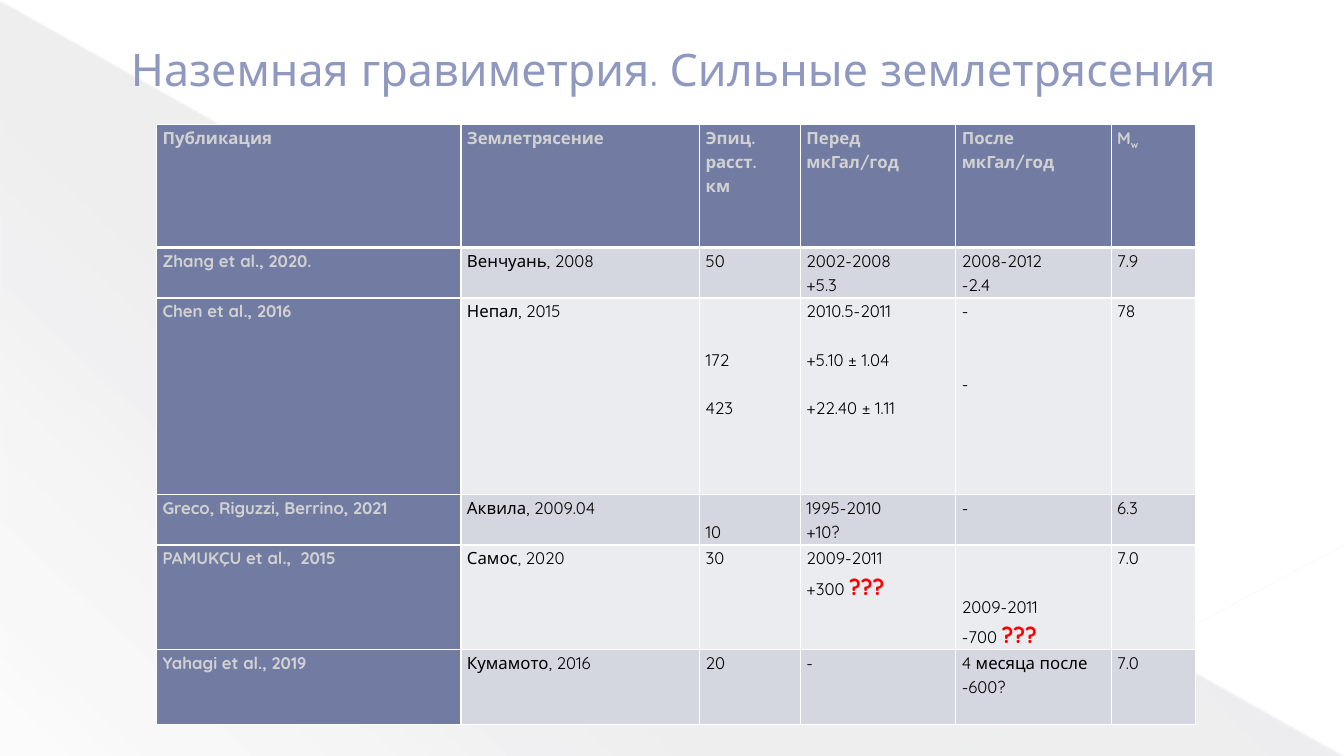
from pptx import Presentation
from pptx.dml.color import RGBColor
from pptx.enum.shapes import MSO_CONNECTOR as Connector, MSO_SHAPE as Shape
from pptx.enum.text import MSO_ANCHOR as Anchor, MSO_AUTO_SIZE as AutoSize, PP_ALIGN as Align
from pptx.oxml import parse_xml
from pptx.oxml.ns import nsdecls, qn
from pptx.util import Pt
from lxml import etree

TITLE = "Наземная гравиметрия. Сильные землетрясения"

# A cell is a tuple of lines; None skips a line, a pair adds a marked ending.
ROWS = [
    [("Публикация",), ("Землетрясение",), ("Эпиц. расст.", "км"),
     ("Перед", "мкГал/год"), ("После мкГал/год",), (("M", "w"),)],
    [("Zhang et al., 2020.",), ("Венчуань, 2008",), ("50",),
     ("2002-2008", "+5.3"), ("2008-2012", "-2.4"), ("7.9",)],
    [("Chen et al., 2016",), ("Непал, 2015",), (None, None, "172", None, "423"),
     ("2010.5-2011", None, "+5.10 ± 1.04", None, "+22.40 ± 1.11"),
     ("-", None, None, "-"), ("78",)],
    [("Greco, Riguzzi, Berrino, 2021",), ("Аквила, 2009.04",), (None, "10"),
     ("1995-2010", "+10?"), ("-",), ("6.3",)],
    [("PAMUKÇU et al.,  2015",), ("Самос, 2020",), ("30",),
     ("2009-2011", ("+300 ", "???")),
     (None, None, "2009-2011", ("-700 ", "???")), ("7.0",)],
    [("Yahagi et al., 2019",), ("Кумамото, 2016",), ("20",),
     ("-",), ("4 месяца после", "-600?"), ("7.0",)],
]
COLUMN_WIDTHS = [217.5, 170.5, 72, 111, 111, 60.5]
ROW_HEIGHTS = [88, 36, 140.5, 36, 71.5, 53.5]

FONT = "Quicksand"
TEXT_SIZE = 12
LINE_SPACING = 1.15
LINE_HEIGHT = 17.25

WHITE = RGBColor(0xFF, 0xFF, 0xFF)
BLACK = RGBColor(0x00, 0x00, 0x00)
RED = RGBColor(0xFF, 0x00, 0x00)
PALE_GREY = RGBColor(0xD1, 0xD1, 0xD1)
SLATE = RGBColor(0x46, 0x46, 0x53)
HEADING_BLUE = RGBColor(0x72, 0x7C, 0xA3)
TITLE_BLUE = RGBColor(0x8F, 0x98, 0xBF)
TITLE_OUTLINE = RGBColor(0x4F, 0x56, 0x71)
BANDS = [RGBColor(0xEB, 0xEC, 0xF0), RGBColor(0xD5, 0xD7, 0xE0)]
RAY = RGBColor(0xE9, 0xF6, 0xF9)

TRIANGLE_STOPS = [(0, 10), (70, 8), (100, 1)]
RAYS = [((0, 0.7), (959, 539.3), 0.39, 35), ((959.8, 389.5), (679, 539.3), 0.47, 45)]


def add_triangle(page):
    triangle = page.shapes.add_shape(Shape.RIGHT_TRIANGLE, Pt(0.7), Pt(1.4), Pt(958.3), Pt(538.6))
    triangle.shadow.inherit = False
    triangle.line.fill.background()
    triangle.fill.background()
    stops = "".join(
        f'<a:gs pos="{place * 1000}"><a:srgbClr val="{SLATE}">'
        f'<a:alpha val="{alpha * 1000}"/></a:srgbClr></a:gs>'
        for place, alpha in TRIANGLE_STOPS)
    gradient = parse_xml(
        f'<a:gradFill {nsdecls("a")} rotWithShape="1"><a:gsLst>{stops}</a:gsLst>'
        f'<a:lin ang="{133 * 60000}" scaled="0"/></a:gradFill>')
    properties = triangle._element.spPr
    properties.replace(properties.find(qn("a:noFill")), gradient)


def add_ray(page, start, end, width, alpha):
    ray = page.shapes.add_connector(Connector.STRAIGHT, *map(Pt, start + end))
    ray.line.width = Pt(width)
    ray.line.color.rgb = RAY
    properties = ray._element.spPr
    colour = properties.find(".//" + qn("a:srgbClr"))
    etree.SubElement(colour, qn("a:alpha")).set("val", str(alpha * 1000))
    etree.SubElement(properties, qn("a:effectLst"))


def format_title(page):
    title = page.shapes.title
    title.left, title.top, title.width, title.height = Pt(48), Pt(21), Pt(864), Pt(56)
    frame = title.text_frame
    frame.text = TITLE
    frame.word_wrap = True
    frame.auto_size = AutoSize.NONE
    frame.vertical_anchor = Anchor.MIDDLE
    frame.margin_left = Pt(45.5)
    para = frame.paragraphs[0]
    para.alignment = Align.LEFT
    span = para.runs[0]
    style_span(span, TITLE_BLUE, size=32)
    span.font._element.insert(0, parse_xml(
        f'<a:ln {nsdecls("a")} w="{Pt(0.5)}"><a:solidFill>'
        f'<a:srgbClr val="{TITLE_OUTLINE}"/></a:solidFill></a:ln>'))
    page.shapes._spTree.append(title._element)  # bring in front of the backdrop


def style_span(span, colour, bold=False, size=TEXT_SIZE):
    span.font.name = FONT
    span.font.size = Pt(size)
    span.font.bold = bold
    span.font.color.rgb = colour


def set_borders(cell, bottom_width):
    properties = cell._tc.get_or_add_tcPr()
    for index, side in enumerate("LRTB"):
        width = bottom_width if side == "B" else 1
        properties.insert(index, parse_xml(
            f'<a:ln{side} {nsdecls("a")} w="{Pt(width)}"><a:solidFill>'
            f'<a:srgbClr val="{WHITE}"/></a:solidFill></a:ln{side}>'))


def fill_cell(cell, lines, row, column):
    is_header = row == 0
    is_heading = is_header or column == 0
    colour = PALE_GREY if is_heading else BLACK
    cell.margin_left = cell.margin_right = Pt(4.3)
    cell.margin_top = cell.margin_bottom = 0
    cell.vertical_anchor = Anchor.TOP
    cell.fill.solid()
    cell.fill.fore_color.rgb = HEADING_BLUE if is_heading else BANDS[row % 2]
    set_borders(cell, 3 if is_header else 1)

    para, skipped = None, 0
    for line in lines:
        if line is None:
            skipped += 1
            continue
        gap = Pt(skipped * LINE_HEIGHT)
        skipped = 0
        if para is None:
            para = cell.text_frame.paragraphs[0]
            cell.margin_top = gap
        else:
            para = cell.text_frame.add_paragraph()
            para.space_before = gap
        para.line_spacing = LINE_SPACING
        text, ending = line if isinstance(line, tuple) else (line, "")
        span = para.add_run()
        span.text = text
        style_span(span, colour, is_heading)
        if ending:
            mark = para.add_run()
            mark.text = ending
            if is_header:
                style_span(mark, colour, True)
                mark.font._element.set("baseline", "-25000")
            else:
                style_span(mark, RED, True, 16)


def add_survey_table(page):
    table = page.shapes.add_table(
        len(ROWS), len(COLUMN_WIDTHS), Pt(111.8), Pt(88.8),
        Pt(sum(COLUMN_WIDTHS)), Pt(sum(ROW_HEIGHTS))).table
    for column, width in zip(table.columns, COLUMN_WIDTHS):
        column.width = Pt(width)
    for row, height in zip(table.rows, ROW_HEIGHTS):
        row.height = Pt(height)
    for row, cells in enumerate(ROWS):
        for column, lines in enumerate(cells):
            fill_cell(table.cell(row, column), lines, row, column)


def main():
    deck = Presentation()
    deck.slide_width, deck.slide_height = Pt(960), Pt(540)
    page = deck.slides.add_slide(deck.slide_layouts[5])
    page.background.fill.solid()
    page.background.fill.fore_color.rgb = WHITE
    add_triangle(page)
    for ray in RAYS:
        add_ray(page, *ray)
    format_title(page)
    add_survey_table(page)
    deck.save("out.pptx")


if __name__ == "__main__":
    main()
